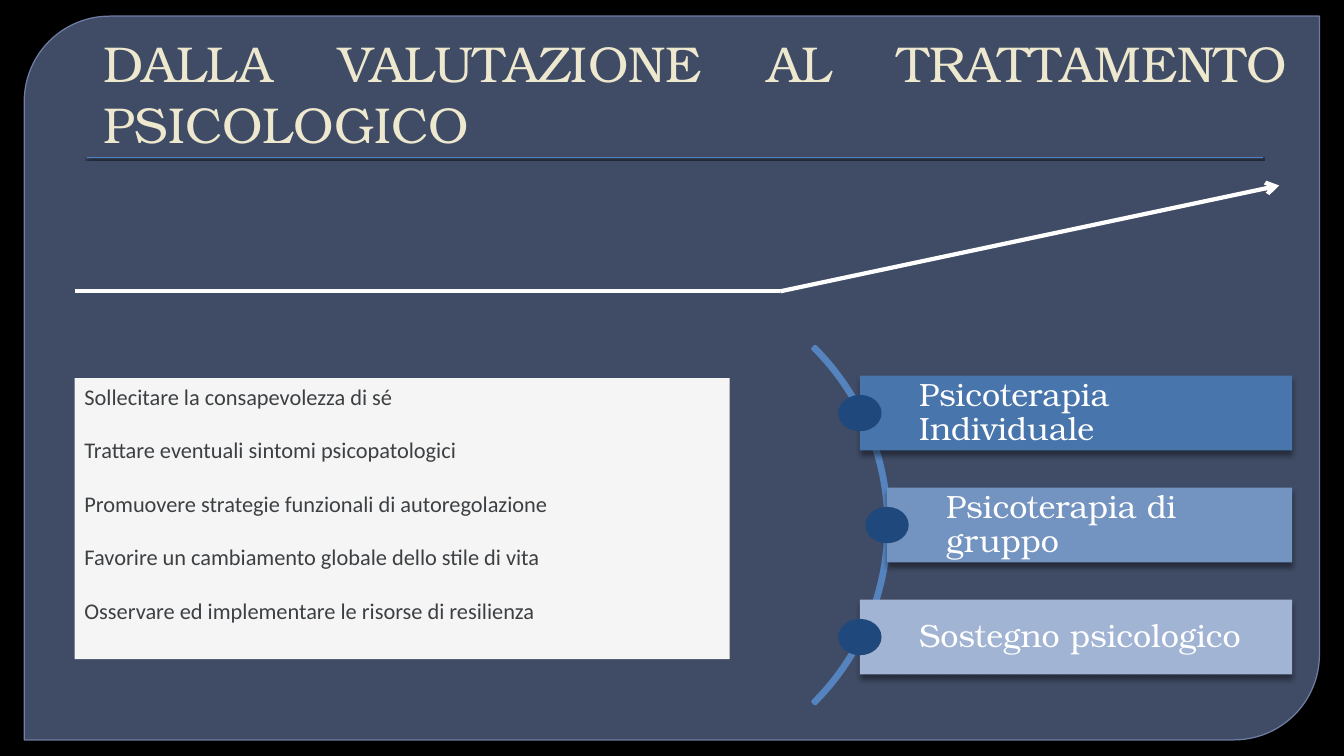
from dataclasses import dataclass

import pptx
import pptx.dml.color
import pptx.enum.shapes
import pptx.enum.text
import pptx.oxml
import pptx.oxml.ns
import pptx.util
from lxml import etree

Pt = pptx.util.Pt
Shapes = pptx.enum.shapes.MSO_SHAPE
Anchor = pptx.enum.text.MSO_ANCHOR
Align = pptx.enum.text.PP_ALIGN
qn = pptx.oxml.ns.qn

SERIF, SANS = "TeX Gyre Bonum", "Calibri"
WHITE, NODE_BLUE = "FFFFFF", "1F497D"


@dataclass
class Therapy:
    label: str
    center_x: float
    color: str


@dataclass
class Segment:
    start: tuple[float, float]
    end: tuple[float, float]
    arrow: bool


GOALS = [
    "Sollecitare la consapevolezza di sé",
    "Trattare eventuali sintomi psicopatologici",
    "Promuovere strategie funzionali di autoregolazione",
    "Favorire un cambiamento globale dello stile di vita",
    "Osservare ed implementare le risorse di resilienza",
]
THERAPIES = [
    Therapy("Psicoterapia Individuale", 614.2, "4875AC"),
    Therapy("Psicoterapia di gruppo", 633.6, "7393C1"),
    Therapy("Sostegno psicologico", 614.2, "A2B4D4"),
]
BEND = (557.3, 208.1)
SEGMENTS = [
    Segment(BEND, (913.7, 132.5), True),
    Segment(BEND, (53.3, 208.1), False),
]
BAR_TOP, BAR_STEP, BAR_HEIGHT, BAR_RIGHT = 268.4, 80, 53.3, 923
NODE_WIDTH, NODE_HEIGHT = 31, 26


def rgb(color: str) -> pptx.dml.color.RGBColor:
    return pptx.dml.color.RGBColor.from_string(color)


def add_alpha(color_format_parent, percent: float) -> None:
    color = color_format_parent.find(".//" + qn("a:srgbClr"))
    etree.SubElement(color, qn("a:alpha"), val=str(int(percent * 1000)))


def add_shadow(shape, alpha: float, blur: float, distance: float) -> None:
    effects = shape._element.spPr.find(qn("a:effectLst"))
    shadow = etree.SubElement(
        effects, qn("a:outerShdw"), blurRad=str(Pt(blur)), dist=str(Pt(distance)),
        dir="5400000", rotWithShape="0")
    etree.SubElement(shadow, qn("a:srgbClr"), val="000000")
    add_alpha(shadow, alpha)


def add_shape(slide, kind, left: float, top: float, width: float, height: float,
              fill: str | None):
    shape = slide.shapes.add_shape(kind, Pt(left), Pt(top), Pt(width), Pt(height))
    shape.shadow.inherit = False
    shape.line.fill.background()
    if fill is None:
        shape.fill.background()
    else:
        shape.fill.solid()
        shape.fill.fore_color.rgb = rgb(fill)
    return shape


def write(shape, lines: list[str], font: str, size: float, color: str,
          align, anchor) -> list:
    frame = shape.text_frame
    frame.word_wrap = True
    frame.vertical_anchor = anchor
    frame.text = "\n".join(lines)
    for paragraph in frame.paragraphs:
        paragraph.alignment = align
        paragraph.font.name = font
        paragraph.font.size = Pt(size)
        paragraph.font.color.rgb = rgb(color)
    return list(frame.paragraphs)


def add_segment(slide, segment: Segment) -> None:
    points = [Pt(value) for value in segment.start + segment.end]
    connector = slide.shapes.add_connector(
        pptx.enum.shapes.MSO_CONNECTOR.STRAIGHT, *points)
    connector.line.color.rgb = rgb(WHITE)
    connector.line.width = Pt(3)
    if segment.arrow:
        etree.SubElement(connector.line._get_or_add_ln(), qn("a:tailEnd"), type="arrow")
    etree.SubElement(connector._element.spPr, qn("a:effectLst"))


def add_therapy(slide, therapy: Therapy, top: float) -> None:
    bar = add_shape(slide, Shapes.RECTANGLE, therapy.center_x, top,
                    BAR_RIGHT - therapy.center_x, BAR_HEIGHT, therapy.color)
    add_shadow(bar, 43, 4, 3)
    frame = bar.text_frame
    frame.margin_left = Pt(42.3)
    frame.margin_top = frame.margin_right = frame.margin_bottom = Pt(4.3)
    paragraphs = write(bar, [therapy.label], SERIF, 23, WHITE, Align.LEFT, Anchor.MIDDLE)
    paragraphs[0].line_spacing = 0.9
    add_shape(slide, Shapes.OVAL, therapy.center_x - NODE_WIDTH / 2,
              top + (BAR_HEIGHT - NODE_HEIGHT) / 2, NODE_WIDTH, NODE_HEIGHT, NODE_BLUE)


def main() -> None:
    presentation = pptx.Presentation()
    presentation.slide_width, presentation.slide_height = Pt(960), Pt(540)
    slide = presentation.slides.add_slide(presentation.slide_layouts[6])
    slide.background.fill.solid()
    slide.background.fill.fore_color.rgb = rgb("000000")

    # Backdrop panel and title rule
    panel = add_shape(slide, Shapes.ROUND_2_DIAG_RECTANGLE, 17.3, 11.5, 925.2, 517, "63759D")
    panel.adjustments[0] = 0.118
    add_alpha(panel._element.spPr, 65)
    panel.line.color.rgb = rgb("7989B3")
    panel.line.width = Pt(0.87)
    add_alpha(panel.line._get_or_add_ln(), 88)
    rule = add_shape(slide, Shapes.RECTANGLE, 61.9, 112.3, 840.2, 0.7, "4F81BD")
    add_shadow(rule, 75, 1, 1)

    # Title
    title = slide.shapes.add_textbox(Pt(62.6), Pt(23), Pt(864), Pt(90))
    title.text_frame.margin_left = Pt(11.5)
    write(title, ["DALLA VALUTAZIONE AL TRATTAMENTO PSICOLOGICO"], SERIF, 36,
          "EDE8CE", Align.JUSTIFY, Anchor.BOTTOM)

    # Treatment goals
    goals = add_shape(slide, Shapes.RECTANGLE, 53.3, 270, 468, 200.9, "F5F5F5")
    for paragraph in write(goals, GOALS, SANS, 16, "3C4043", Align.JUSTIFY, Anchor.TOP):
        paragraph.space_after = Pt(19)

    # Arc with the three therapies
    arc = add_shape(slide, Shapes.BLOCK_ARC, 275, 195.1, 360, 360, None)
    for index, value in enumerate((189, 27, 0.005)):
        arc.adjustments[index] = value
    arc.line.color.rgb = rgb("5483BE")
    arc.line.width = Pt(3)
    for index, therapy in enumerate(THERAPIES):
        add_therapy(slide, therapy, BAR_TOP + index * BAR_STEP)

    # Rising path
    for segment in SEGMENTS:
        add_segment(slide, segment)

    presentation.save("out.pptx")


if __name__ == "__main__":
    main()
